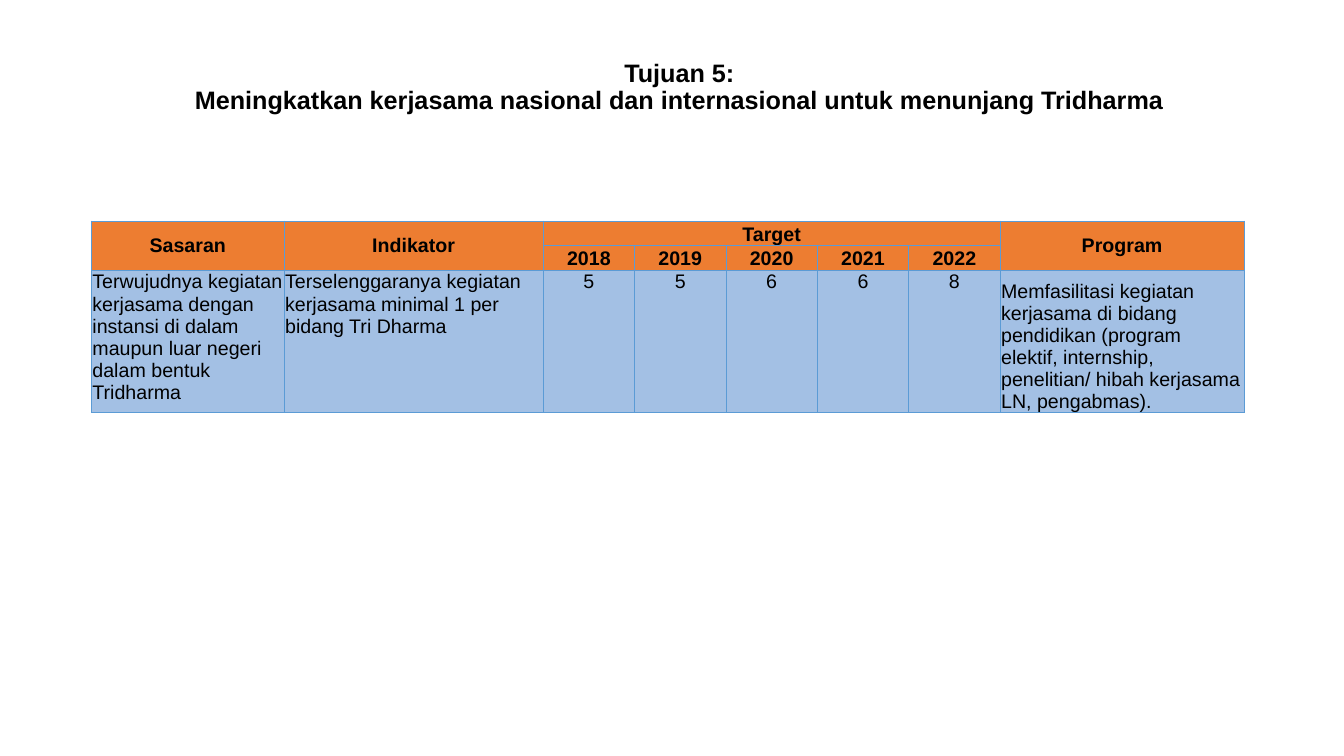
from lxml import etree
from pptx import Presentation
from pptx.dml.color import RGBColor
from pptx.enum import text
from pptx.oxml import ns
from pptx.util import Pt

TITLE = "Tujuan 5:\vMeningkatkan kerjasama nasional dan internasional untuk menunjang Tridharma"
ROWS = [
    ["Sasaran", "Indikator", "Target", "", "", "", "", "Program"],
    ["", "", "2018", "2019", "2020", "2021", "2022", ""],
    [
        "Terwujudnya kegiatan kerjasama dengan instansi di dalam maupun luar negeri dalam bentuk Tridharma",
        "Terselenggaranya kegiatan kerjasama minimal 1 per bidang Tri Dharma",
        "5", "5", "6", "6", "8",
        "Memfasilitasi kegiatan kerjasama di bidang pendidikan (program elektif, internship, "
        "penelitian/ hibah kerjasama LN, pengabmas).",
    ],
]
MERGES = [((0, 0), (1, 0)), ((0, 1), (1, 1)), ((0, 2), (0, 6)), ((0, 7), (1, 7))]
YEAR_COLUMNS = range(2, 7)
PROGRAM_COLUMN = 7
HEADER_ROWS = 2
COLUMN_WIDTHS = [137.7, 185] + [65.3] * len(YEAR_COLUMNS) + [174.3]
ROW_HEIGHTS = [16.6, 16.6, 100]

BLACK = RGBColor(0x00, 0x00, 0x00)
ORANGE = RGBColor(0xED, 0x7D, 0x31)
LIGHT_BLUE = RGBColor(0xA3, 0xC0, 0xE4)
BORDER_BLUE = RGBColor(0x5B, 0x9B, 0xD5)

ALIGN = text.PP_ALIGN
ANCHOR = text.MSO_ANCHOR
CELL_MARGINS = {"margin_left": Pt(0.72), "margin_right": Pt(0.72),
                "margin_top": Pt(0.72), "margin_bottom": 0}


def set_attributes(target, values):
    for name, value in values.items():
        setattr(target, name, value)


def format_text(frame, size, bold, alignment):
    for paragraph in frame.paragraphs:
        paragraph.alignment = alignment
        for run in paragraph.runs:
            set_attributes(run.font, {"name": "Arial", "size": Pt(size), "bold": bold})
            run.font.color.rgb = BLACK


def add_borders(cell):
    properties = cell._tc.get_or_add_tcPr()
    for position, side in enumerate(("lnL", "lnR", "lnT", "lnB")):
        line = etree.Element(ns.qn(f"a:{side}"), w=str(Pt(0.5)))
        fill = etree.SubElement(line, ns.qn("a:solidFill"))
        etree.SubElement(fill, ns.qn("a:srgbClr"), val=str(BORDER_BLUE))
        properties.insert(position, line)


def add_title(slide):
    box = slide.shapes.add_textbox(Pt(71.3), Pt(31.7), Pt(828), Pt(62.6))
    frame = box.text_frame
    set_attributes(frame, {"word_wrap": True, "vertical_anchor": ANCHOR.MIDDLE, "text": TITLE})
    frame.paragraphs[0].line_spacing = 0.9
    format_text(frame, 18, True, ALIGN.CENTER)


def cell_anchor(row, column):
    if row < HEADER_ROWS:
        return ANCHOR.BOTTOM if column in YEAR_COLUMNS else ANCHOR.MIDDLE
    return ANCHOR.BOTTOM if column == PROGRAM_COLUMN else ANCHOR.TOP


def add_target_table(slide):
    frame = slide.shapes.add_table(len(ROWS), len(COLUMN_WIDTHS), Pt(65.3), Pt(157.9),
                                   Pt(sum(COLUMN_WIDTHS)), Pt(sum(ROW_HEIGHTS)))
    table = frame.table
    set_attributes(table, {"first_row": False, "horz_banding": False})
    for column, width in zip(table.columns, COLUMN_WIDTHS):
        column.width = Pt(width)
    for row, height in zip(table.rows, ROW_HEIGHTS):
        row.height = Pt(height)
    for row, values in enumerate(ROWS):
        header = row < HEADER_ROWS
        for column, value in enumerate(values):
            cell = table.cell(row, column)
            set_attributes(cell, {"text": value, "vertical_anchor": cell_anchor(row, column),
                                  **CELL_MARGINS})
            cell.fill.solid()
            cell.fill.fore_color.rgb = ORANGE if header else LIGHT_BLUE
            centred = header or column in YEAR_COLUMNS
            format_text(cell.text_frame, 14, header, ALIGN.CENTER if centred else ALIGN.LEFT)
            if not value:
                cell.text_frame.paragraphs[0].font.size = Pt(14)
            add_borders(cell)
    for first, last in MERGES:
        table.cell(*first).merge(table.cell(*last))


def main():
    presentation = Presentation()
    set_attributes(presentation, {"slide_width": Pt(960), "slide_height": Pt(540)})
    slide = presentation.slides.add_slide(presentation.slide_layouts[6])
    add_title(slide)
    add_target_table(slide)
    presentation.save("out.pptx")


if __name__ == "__main__":
    main()
